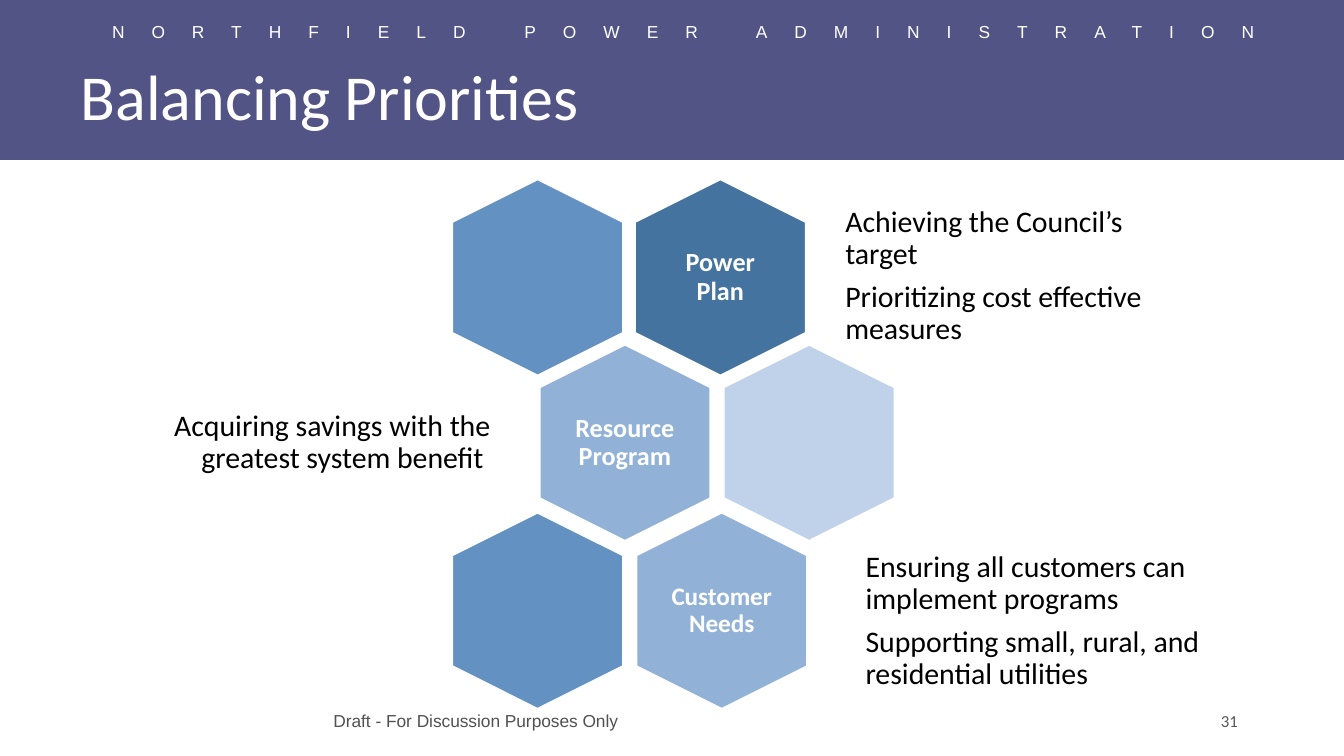
"""Build the Balancing Priorities slide with its honeycomb of hexagons."""
from pptx import Presentation
from pptx.dml.color import RGBColor
from pptx.enum.shapes import MSO_SHAPE
from pptx.enum.text import MSO_ANCHOR, MSO_AUTO_SIZE, PP_ALIGN
from pptx.util import Inches, Pt

LEFT, CENTER, RIGHT = PP_ALIGN.LEFT, PP_ALIGN.CENTER, PP_ALIGN.RIGHT
MIDDLE, TOP = MSO_ANCHOR.MIDDLE, MSO_ANCHOR.TOP
RECTANGLE, HEXAGON = MSO_SHAPE.RECTANGLE, MSO_SHAPE.HEXAGON
NO_FIT = MSO_AUTO_SIZE.NONE

COLORS = {
    "band": "535486", "white": "FFFFFF", "black": "000000",
    "footer": "515151", "number": "595959", "dark": "43739E",
    "medium": "6391C1", "light": "91B1D6", "pale": "C0D2EA",
}


def color(name):
    return RGBColor.from_string(COLORS[name])


def write(sp, lines, size, ink, align=LEFT, font="Calibri", bold=False,
          anchor=MIDDLE, inset=None, spacing=None, after=0):
    tf = sp.text_frame
    tf.word_wrap = True
    tf.auto_size = NO_FIT
    tf.vertical_anchor = anchor
    if inset is not None:
        tf.margin_left = tf.margin_right = Inches(inset)
        tf.margin_top = tf.margin_bottom = Inches(inset)
    for i, line in enumerate(lines):
        p = tf.add_paragraph() if i else tf.paragraphs[0]
        p.alignment = align
        p.line_spacing = spacing
        p.space_after = Pt(after)
        r = p.add_run()
        r.text = line
        r.font.name = font
        r.font.size = Pt(size)
        r.font.bold = bold
        r.font.color.rgb = color(ink)
    return r


prs = Presentation()
prs.slide_width, prs.slide_height = Inches(10), Inches(10 * 9 / 16)
s = prs.slides.add_slide(prs.slide_layouts[5])
shapes = s.shapes

band = shapes.add_shape(RECTANGLE, 0, Inches(-0.01), Inches(10), Inches(1.2))
band.shadow.inherit = False
band.fill.solid()
band.fill.fore_color.rgb = color("band")
band.line.fill.background()
shapes._spTree.insert(2, band._element)

title = shapes.title
title.left, title.top = Inches(0.5), Inches(0.5)
title.width, title.height = Inches(9), Inches(0.49)
write(title, ["Balancing Priorities"], 34.3, "white", spacing=0.9)

header = shapes.add_textbox(0, Inches(0.11), Inches(10.17), Inches(0.26))
r = write(header, ["NORTHFIELD POWER ADMINISTRATION"], 9.3, "white", CENTER,
          "Arial", anchor=TOP)
r._r.get_or_add_rPr().set("spc", "1450")

footer = shapes.add_textbox(Inches(0.5), Inches(5.21), Inches(6.08), Inches(0.3))
write(footer, ["Draft - For Discussion Purposes Only"], 9.3, "footer", CENTER, "Arial")
number = shapes.add_textbox(Inches(7.06), Inches(5.21), Inches(2.25), Inches(0.3))
write(number, ["31"], 9, "number", RIGHT)

HEX_W, HEX_H = 1.46, 1.27
LABEL_W, LABEL_H = 0.87, 1
hexagons = [
    (4.63, 1.43, "dark", "Power Plan", 14),
    (3.27, 1.43, "medium", None, None),
    (3.92, 2.66, "light", "Resource Program", 14),
    (5.29, 2.66, "pale", None, None),
    (4.64, 3.91, "light", "Customer Needs", 13.5),
    (3.27, 3.91, "medium", None, None),
]
for x, y, fill, label, size in hexagons:
    sp = shapes.add_shape(HEXAGON, Inches(x), Inches(y), Inches(HEX_W), Inches(HEX_H))
    sp.rotation = 90
    sp.adjustments[0] = 0.25
    sp.shadow.inherit = False
    sp.fill.solid()
    sp.fill.fore_color.rgb = color(fill)
    sp.line.color.rgb = color("white")
    sp.line.width = Pt(1)
    if label:
        box = shapes.add_textbox(Inches(x + (HEX_W - LABEL_W) / 2),
                                 Inches(y + (HEX_H - LABEL_H) / 2),
                                 Inches(LABEL_W), Inches(LABEL_H))
        write(box, [label], size, "white", CENTER, bold=True, inset=0.06, spacing=0.9)

notes = [
    (6.22, 1.62, 2.69, LEFT,
     ["Achieving the Council’s target", "Prioritizing cost effective measures"]),
    (1.05, 2.86, 2.67, RIGHT,
     ["Acquiring savings with the greatest system benefit "]),
    (6.37, 4.19, 2.65, LEFT,
     ["Ensuring all customers can implement programs",
      "Supporting small, rural, and residential utilities"]),
]
for x, y, w, align, lines in notes:
    box = shapes.add_textbox(Inches(x), Inches(y), Inches(w), Inches(0.87))
    write(box, lines, 16, "black", align, inset=0.07, spacing=0.9, after=5.6)

prs.save("out.pptx")
